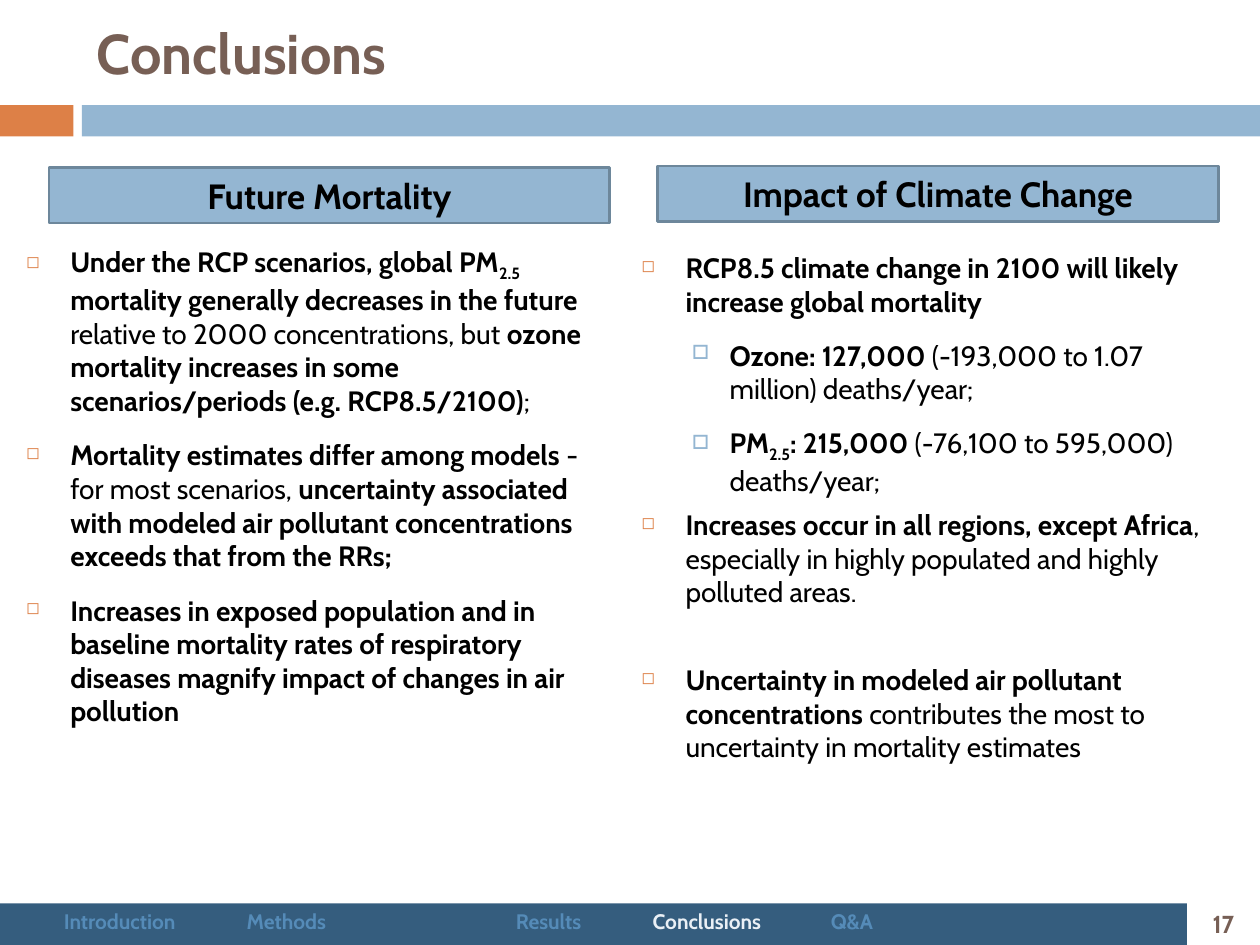
from lxml import etree
from pptx import Presentation
from pptx.dml.color import RGBColor
from pptx.enum.shapes import MSO_SHAPE
from pptx.enum.text import MSO_ANCHOR, PP_ALIGN
from pptx.oxml.ns import qn
from pptx.util import Pt

RECT = MSO_SHAPE.RECTANGLE
TOP, MID = MSO_ANCHOR.TOP, MSO_ANCHOR.MIDDLE
LEFT, CENTER = PP_ALIGN.LEFT, PP_ALIGN.CENTER
FONT = "Cabin"
COLOR = {"sky": "94B6D2", "navy": "355D7E", "orange": "DD8047",
         "brown": "775F55", "edge": "6D879B", "black": "000000",
         "dim": "558BB8", "pale": "EAF0F6"}

# Content: a run is (text, style), with b bold, s bold subscript, n normal
# A point is (level, space before, runs)
FUTURE = [
    (0, 0, [("Under the RCP scenarios, global PM", "b"), ("2.5", "s"),
            (" mortality generally decreases in the future ", "b"),
            ("relative to 2000 concentrations, but ", "n"),
            ("ozone mortality increases in some scenarios/periods "
             "(e.g. RCP8.5/2100)", "b"), (";", "n")]),
    (0, 0, [("Mortality estimates differ among models ", "b"),
            ("- for most scenarios, ", "n"),
            ("uncertainty associated with modeled air pollutant "
             "concentrations exceeds that from the RRs;", "b")]),
    (0, 0, [("Increases in exposed population and in baseline mortality rates "
             "of respiratory diseases magnify impact of changes in air "
             "pollution", "b")]),
]
CLIMATE = [
    (0, 0, [("RCP8.5 climate change in 2100 will likely increase global "
             "mortality", "b")]),
    (1, 5.5, [("Ozone: 127,000 ", "b"),
              ("(-193,000 to 1.07 million) deaths/year;", "n")]),
    (1, 5.5, [("PM", "b"), ("2.5", "s"), (": 215,000 ", "b"),
              ("(-76,100 to 595,000) deaths/year;", "n")]),
    (0, 0, [("Increases occur in all regions, except Africa", "b"),
            (", especially in highly populated and highly polluted areas.",
             "n")]),
    (0, 25, [("Uncertainty in modeled air pollutant concentrations ", "b"),
             ("contributes the most to uncertainty in mortality estimates",
              "n")]),
]
# Column: heading, heading place, points, body place, insets, space after
COLS = [
    ("Future Mortality", (28.1, 95.8), FUTURE,
     (7.9, 136.1, 350.6, 356.4), (7.2, 3.6, 7.2, 3.6), 12),
    ("Impact of Climate Change", (375.8, 95), CLIMATE,
     (362.2, 136.1, 344.2, 356.4), (4.3, 7.2, 7.2, 3.6), 6),
]
BARS = [("sky", (46.8, 60, 673.2, 18)), ("navy", (0, 516.2, 678.2, 23.8)),
        ("orange", (0, 60, 42, 18))]
# Bullet by level: sign, colour, size in percent, margin, hanging indent
BULLETS = [("◻", "orange", 60, 25.2, 25.2), ("□", "sky", 70, 50.4, 21.6)]
# Navigation: name and tab stop
NAV = [("Introduction", 29.4), ("Methods", 133.9), ("Results", 287.7),
       ("Conclusions", 365.9), ("Q&A", 467.7)]
HERE = "Conclusions"

deck = Presentation()
deck.slide_width, deck.slide_height = Pt(720), Pt(540)
slide = deck.slides.add_slide(deck.slide_layouts[6])


def rgb(name):
    return RGBColor.from_string(COLOR[name])


def put(para, text, size=16, color="black", style="b"):
    run = para.add_run()
    run.text = text
    font = run.font
    font.name, font.size, font.bold = FONT, Pt(size), style != "n"
    font.color.rgb = rgb(color)
    if style == "s":
        font._element.set("baseline", "-25000")


def bar(place, fill, line=None):
    shape = slide.shapes.add_shape(RECT, *map(Pt, place))
    shape.shadow.inherit = False
    shape.fill.solid()
    shape.fill.fore_color.rgb = rgb(fill)
    if line:
        shape.line.color.rgb = rgb(line)
        shape.line.width = Pt(1.5)
    else:
        shape.line.fill.background()
    return shape


def box(place):
    return slide.shapes.add_textbox(*map(Pt, place))


def setup(shape, anchor=MID, align=LEFT, inset=(7.2, 3.6, 7.2, 3.6)):
    frame = shape.text_frame
    frame.word_wrap, frame.vertical_anchor = True, anchor
    (frame.margin_left, frame.margin_top,
     frame.margin_right, frame.margin_bottom) = map(Pt, inset)
    frame.paragraphs[0].alignment = align
    return frame


def child(parent, tag, **attrs):
    node = etree.SubElement(parent, qn(tag))
    for key, value in attrs.items():
        node.set(key, str(value))
    return node


def bullet(para, level):
    sign, color, size, margin, hang = BULLETS[level]
    props = para._p.get_or_add_pPr()
    props.set("marL", str(Pt(margin)))
    props.set("indent", str(-Pt(hang)))
    child(child(props, "a:buClr"), "a:srgbClr", val=COLOR[color])
    child(props, "a:buSzPct", val=size * 1000)
    child(props, "a:buChar", char=sign)


# Bars, page number and title
for fill, place in BARS:
    bar(place, fill)
page = setup(box((678.2, 516.2, 41.8, 23.8)), align=CENTER)
put(page.paragraphs[0], "17", size=14, color="brown")
title = setup(box((48.2, 0, 642.2, 60)))
put(title.paragraphs[0], "Conclusions", size=32, color="brown")

# Two columns with headings
for head, spot, points, place, inset, after in COLS:
    frame = setup(box(place), anchor=TOP, inset=inset)
    for i, (level, before, runs) in enumerate(points):
        para = frame.add_paragraph() if i else frame.paragraphs[0]
        para.space_before, para.space_after = Pt(before), Pt(after)
        bullet(para, level)
        for text, style in runs:
            put(para, text, style=style)
    frame = setup(bar((*spot, 320.4, 31.7), "sky", "edge"), align=CENTER)
    put(frame.paragraphs[0], head, size=20)

# Navigation line
para = setup(box((0, 515.5, 720, 21.6)), anchor=TOP).paragraphs[0]
tabs = child(para._p.get_or_add_pPr(), "a:tabLst")
for name, stop in NAV:
    child(tabs, "a:tab", pos=Pt(stop), algn="l")
    put(para, "\t" + name, size=12, color="pale" if name == HERE else "dim")

deck.save("out.pptx")
